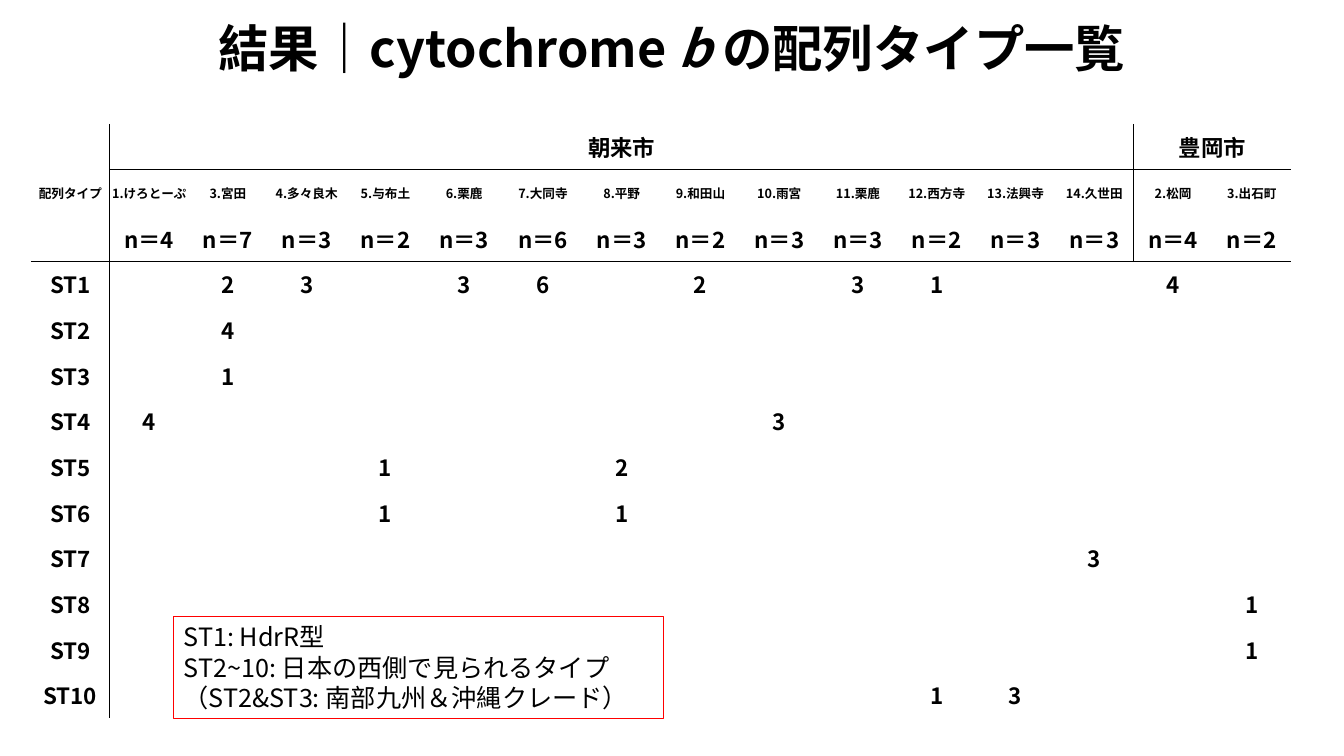
from dataclasses import dataclass, field

from lxml import etree
from pptx import Presentation
from pptx import util as u
from pptx.dml.color import RGBColor
from pptx.enum import shapes, text
from pptx.oxml.ns import qn


@dataclass(frozen=True)
class Theme:
    font: str = "Noto Sans CJK JP"
    ink: str = "000000"
    accent: str = "FF0000"
    title: int = 36
    note: int = 18
    body: int = 16
    small: int = 9
    rule: float = 0.5
    plain_table: str = "{2D5ABB26-0587-4C30-8999-92F81FD0307C}"


@dataclass(frozen=True)
class Site:
    name: str
    n: int
    counts: dict[int, int] = field(default_factory=dict)  # sequence type -> individuals


@dataclass(frozen=True)
class City:
    name: str
    sites: list[Site]


T = Theme()
CITIES = [
    City("朝来市", [
        Site("1.けろとーぷ", 4, {4: 4}),
        Site("3.宮田", 7, {1: 2, 2: 4, 3: 1}),
        Site("4.多々良木", 3, {1: 3}),
        Site("5.与布土", 2, {5: 1, 6: 1}),
        Site("6.栗鹿", 3, {1: 3}),
        Site("7.大同寺", 6, {1: 6}),
        Site("8.平野", 3, {5: 2, 6: 1}),
        Site("9.和田山", 2, {1: 2}),
        Site("10.雨宮", 3, {4: 3}),
        Site("11.栗鹿", 3, {1: 3}),
        Site("12.西方寺", 2, {1: 1, 10: 1}),
        Site("13.法興寺", 3, {10: 3}),
        Site("14.久世田", 3, {7: 3}),
    ]),
    City("豊岡市", [
        Site("2.松岡", 4, {1: 4}),
        Site("3.出石町", 2, {8: 1, 9: 1}),
    ]),
]
NOTES = [
    "ST1: HdrR型",
    "ST2~10: 日本の西側で見られるタイプ",
    "（ST2&ST3: 南部九州＆沖縄クレード）",
]
HEAD_ROWS = 3
TYPES = 10


def add_run(p, words: str, size: int, bold: bool = False, italic: bool = False) -> None:
    r = p.add_run()
    r.text = words
    f = r.font
    f.size, f.bold, f.italic, f.name = u.Pt(size), bold, italic, T.font
    f.color.rgb = RGBColor.from_string(T.ink)
    etree.SubElement(r._r.get_or_add_rPr(), qn("a:ea"), typeface=T.font)


def write_cell(cell, words: str, size: int = T.body) -> None:
    p = cell.text_frame.paragraphs[0]
    p.alignment = text.PP_ALIGN.CENTER
    add_run(p, words, size, bold=True)


def rule_cell(cell, sides: dict[str, bool]) -> None:
    """Rule the sides marked True and clear the others (keys in L, R, T, B order)."""
    tc_pr = cell._tc.get_or_add_tcPr()
    for side, ruled in sides.items():
        ln = etree.SubElement(tc_pr, qn(f"a:ln{side}"), w=str(u.Pt(T.rule)))
        if ruled:
            fill = etree.SubElement(ln, qn("a:solidFill"))
            etree.SubElement(fill, qn("a:srgbClr"), val=T.ink)
        else:
            etree.SubElement(ln, qn("a:noFill"))


def style_cells(tbl, city_end: int) -> None:
    """Rule off the type column, the first city and the header, with no fill."""
    for row in range(len(tbl.rows)):
        for col in range(len(tbl.columns)):
            cell = tbl.cell(row, col)
            bottom = row + cell.span_height - 1
            right = col + cell.span_width - 1
            in_head = row < HEAD_ROWS
            rule_cell(cell, {
                "L": col == 1 or (in_head and col == city_end + 1),
                "R": right == 0 or (in_head and right == city_end),
                "T": row == HEAD_ROWS or (row == 1 and col > 0),
                "B": bottom == HEAD_ROWS - 1 or (bottom == 0 and col > 0),
            })
            cell.fill.background()
            cell.vertical_anchor = text.MSO_ANCHOR.MIDDLE
            cell.margin_left = cell.margin_right = cell.margin_top = u.Cm(0.02)
            cell.margin_bottom = 0


def add_type_table(s) -> None:
    sites = [site for city in CITIES for site in city.sites]
    frame = s.shapes.add_table(HEAD_ROWS + TYPES, len(sites) + 1,
                               u.Cm(0.78), u.Cm(3.12), u.Cm(31.76), u.Cm(14.97))
    tbl = frame.table
    tbl.first_row = tbl.horz_banding = False
    tbl._tbl.tblPr.find(qn("a:tableStyleId")).text = T.plain_table

    tbl.cell(0, 0).merge(tbl.cell(HEAD_ROWS - 1, 0))
    write_cell(tbl.cell(0, 0), "配列タイプ", T.small)
    col = 1
    for city in CITIES:
        end = col + len(city.sites) - 1
        tbl.cell(0, col).merge(tbl.cell(0, end))
        write_cell(tbl.cell(0, col), city.name)
        col = end + 1
    for st in range(1, TYPES + 1):
        write_cell(tbl.cell(HEAD_ROWS + st - 1, 0), f"ST{st}")
    for col, site in enumerate(sites, 1):
        write_cell(tbl.cell(1, col), site.name, T.small)
        write_cell(tbl.cell(2, col), f"n＝{site.n}")
        for st, count in site.counts.items():
            write_cell(tbl.cell(HEAD_ROWS + st - 1, col), str(count))
    style_cells(tbl, len(CITIES[0].sites))


def add_title(s) -> None:
    sp = s.shapes.add_textbox(u.Cm(3.56), u.Cm(0.27), u.Cm(26.75), u.Cm(1.8))
    tf = sp.text_frame
    tf.word_wrap = True
    p = tf.paragraphs[0]
    p.alignment = text.PP_ALIGN.CENTER
    p.line_spacing = u.Pt(44)
    add_run(p, "結果｜cytochrome ", T.title, bold=True)
    add_run(p, "b ", T.title, bold=True, italic=True)
    add_run(p, "の配列タイプ一覧", T.title, bold=True)


def add_notes_box(s) -> None:
    sp = s.shapes.add_shape(shapes.MSO_SHAPE.RECTANGLE,
                            u.Cm(4.38), u.Cm(15.53), u.Cm(12.34), u.Cm(2.57))
    sp.shadow.inherit = False
    sp.fill.background()
    sp.line.color.rgb = RGBColor.from_string(T.accent)
    sp.line.width = u.Pt(0.75)
    tf = sp.text_frame
    tf.word_wrap = True
    tf.vertical_anchor = text.MSO_ANCHOR.TOP
    for i, note in enumerate(NOTES):
        p = tf.add_paragraph() if i else tf.paragraphs[0]
        p.alignment = text.PP_ALIGN.LEFT
        p.line_spacing = u.Pt(21.8)
        add_run(p, note, T.note)


def main() -> None:
    prs = Presentation()
    prs.slide_width, prs.slide_height = u.Cm(33.87), u.Cm(19.05)
    s = prs.slides.add_slide(prs.slide_layouts[6])
    add_type_table(s)
    add_title(s)
    add_notes_box(s)
    prs.save("out.pptx")


if __name__ == "__main__":
    main()
